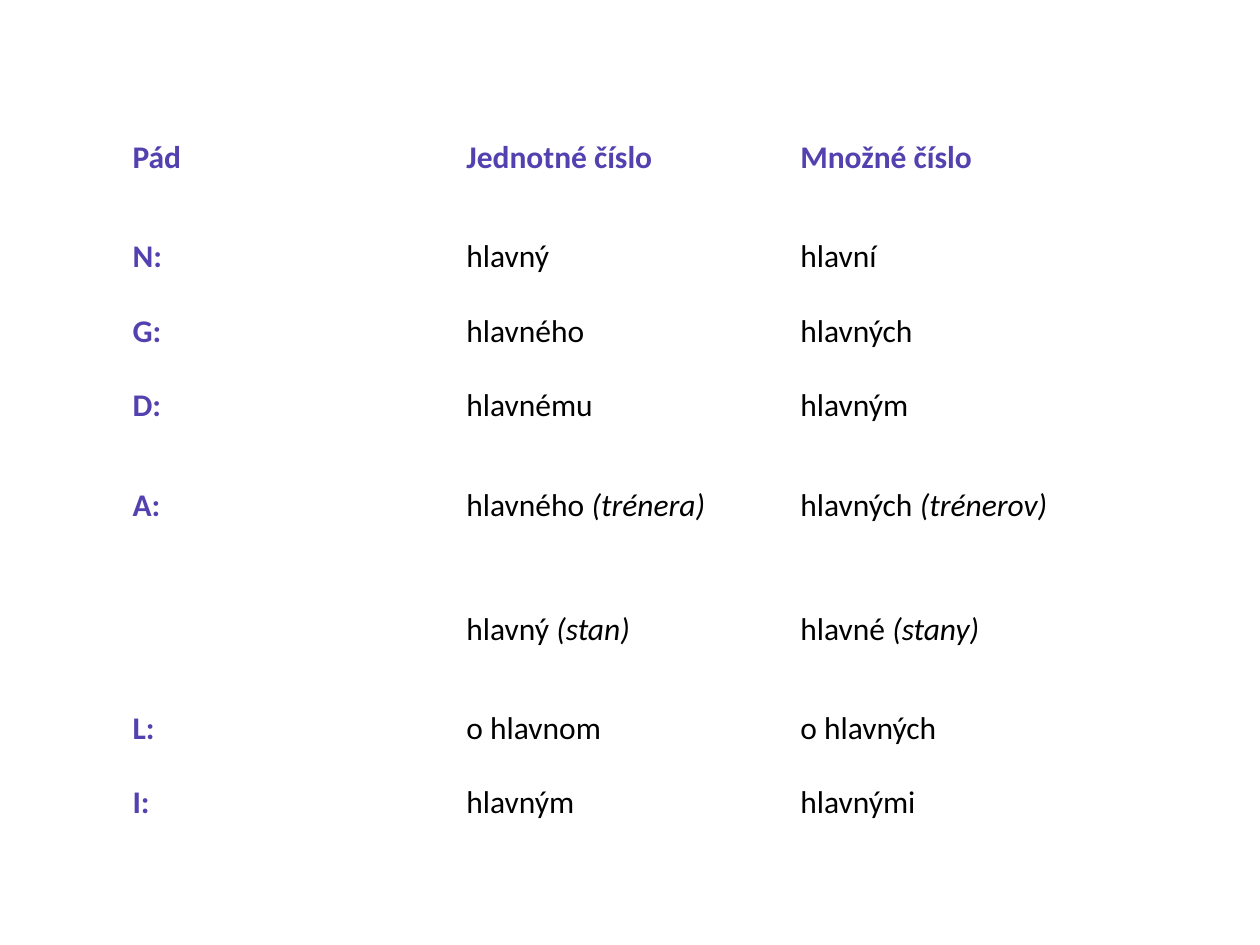
"""Build a slide with the Slovak declension table of the adjective hlavný."""
import pptx
import pptx.dml.color
import pptx.enum.text
import pptx.util

Pt = pptx.util.Pt
VIOLET = pptx.dml.color.RGBColor(0x53, 0x41, 0xAF)
BLACK = pptx.dml.color.RGBColor(0, 0, 0)
WHITE = pptx.dml.color.RGBColor(255, 255, 255)

COLUMN_WIDTH = 190.8
TALL, SHORT = 71, 42.5
DECLENSION = [
    (TALL, "Pád", "Jednotné číslo", "Množné číslo"),
    (SHORT, "N:", "hlavný", "hlavní"),
    (SHORT, "G:", "hlavného", "hlavných"),
    (SHORT, "D:", "hlavnému", "hlavným"),
    (TALL, "A:", "hlavného (trénera)", "hlavných (trénerov)"),
    (TALL, "", "hlavný (stan)", "hlavné (stany)"),
    (SHORT, "L:", "o hlavnom", "o hlavných"),
    (SHORT, "I:", "hlavným", "hlavnými"),
]


def fill_cell(cell, wording, is_heading):
    """Write one cell, with any bracketed example noun in italics."""
    cell.fill.solid()
    cell.fill.fore_color.rgb = WHITE
    cell.vertical_anchor = pptx.enum.text.MSO_ANCHOR.MIDDLE
    cell.margin_left = cell.margin_right = Pt(5.25)
    cell.margin_top = cell.margin_bottom = Pt(5.25)
    paragraph = cell.text_frame.paragraphs[0]
    paragraph.font.name = "Calibri"
    paragraph.font.size = Pt(18)
    paragraph.font.bold = is_heading
    paragraph.font.color.rgb = VIOLET if is_heading else BLACK
    form, bracket, noun = wording.partition("(")
    if form:
        paragraph.add_run().text = form
    if noun:
        example = paragraph.add_run()
        example.text = bracket + noun
        example.font.italic = True


def add_declension_table(slide):
    """Add the table of cases in the singular and plural."""
    height = sum(row[0] for row in DECLENSION)
    table = slide.shapes.add_table(
        len(DECLENSION), 3, Pt(70.5), Pt(54.75), Pt(3 * COLUMN_WIDTH), Pt(height)
    ).table
    table.first_row = table.horz_banding = False
    for column in table.columns:
        column.width = Pt(COLUMN_WIDTH)
    for row_index, (row_height, *wordings) in enumerate(DECLENSION):
        table.rows[row_index].height = Pt(row_height)
        for column_index, wording in enumerate(wordings):
            is_heading = row_index == 0 or column_index == 0
            fill_cell(table.cell(row_index, column_index), wording, is_heading)


def main():
    """Create and save the presentation."""
    presentation = pptx.Presentation()
    presentation.slide_width, presentation.slide_height = Pt(720), Pt(540)
    slide = presentation.slides.add_slide(presentation.slide_layouts[6])
    add_declension_table(slide)
    presentation.save("out.pptx")


if __name__ == "__main__":
    main()
